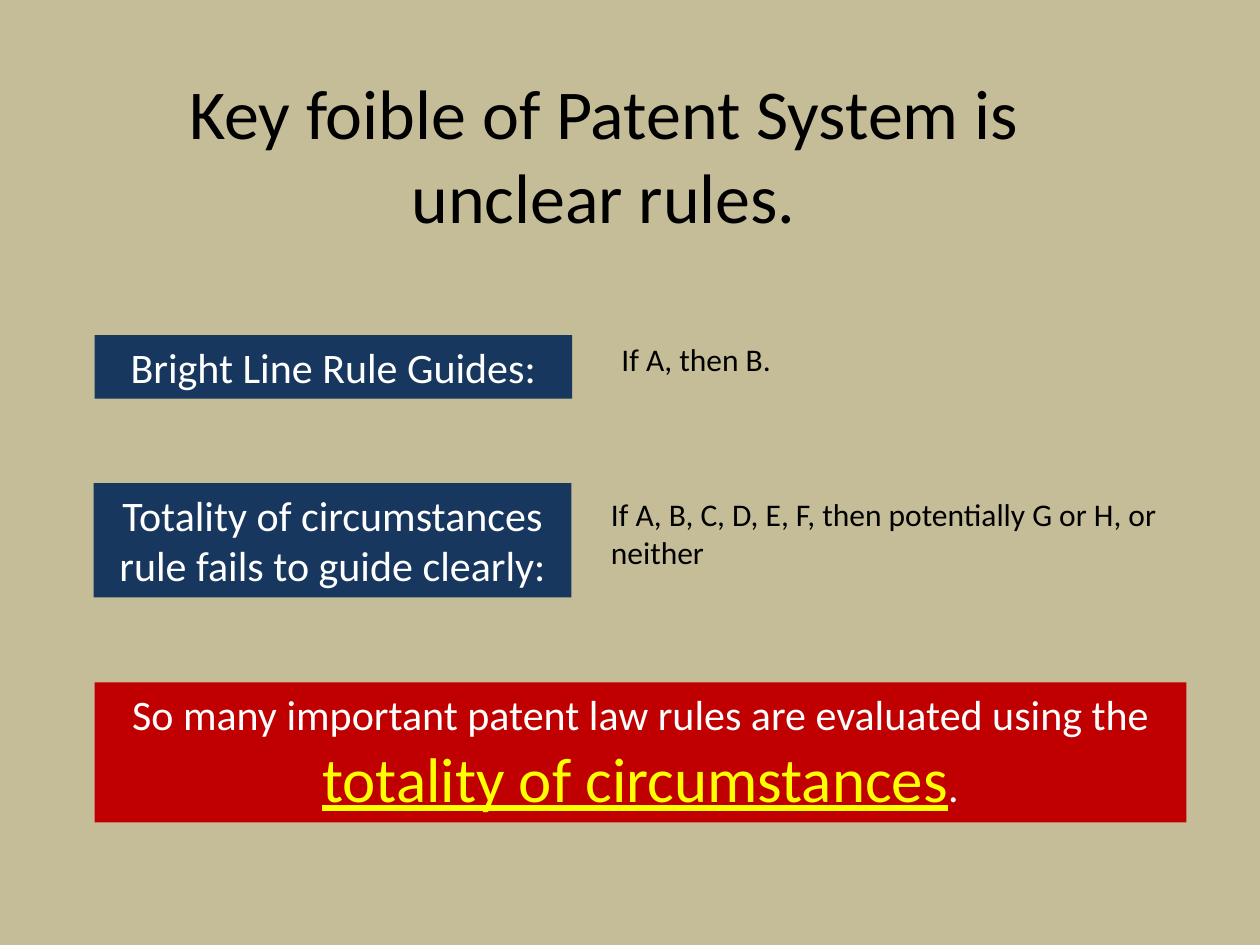
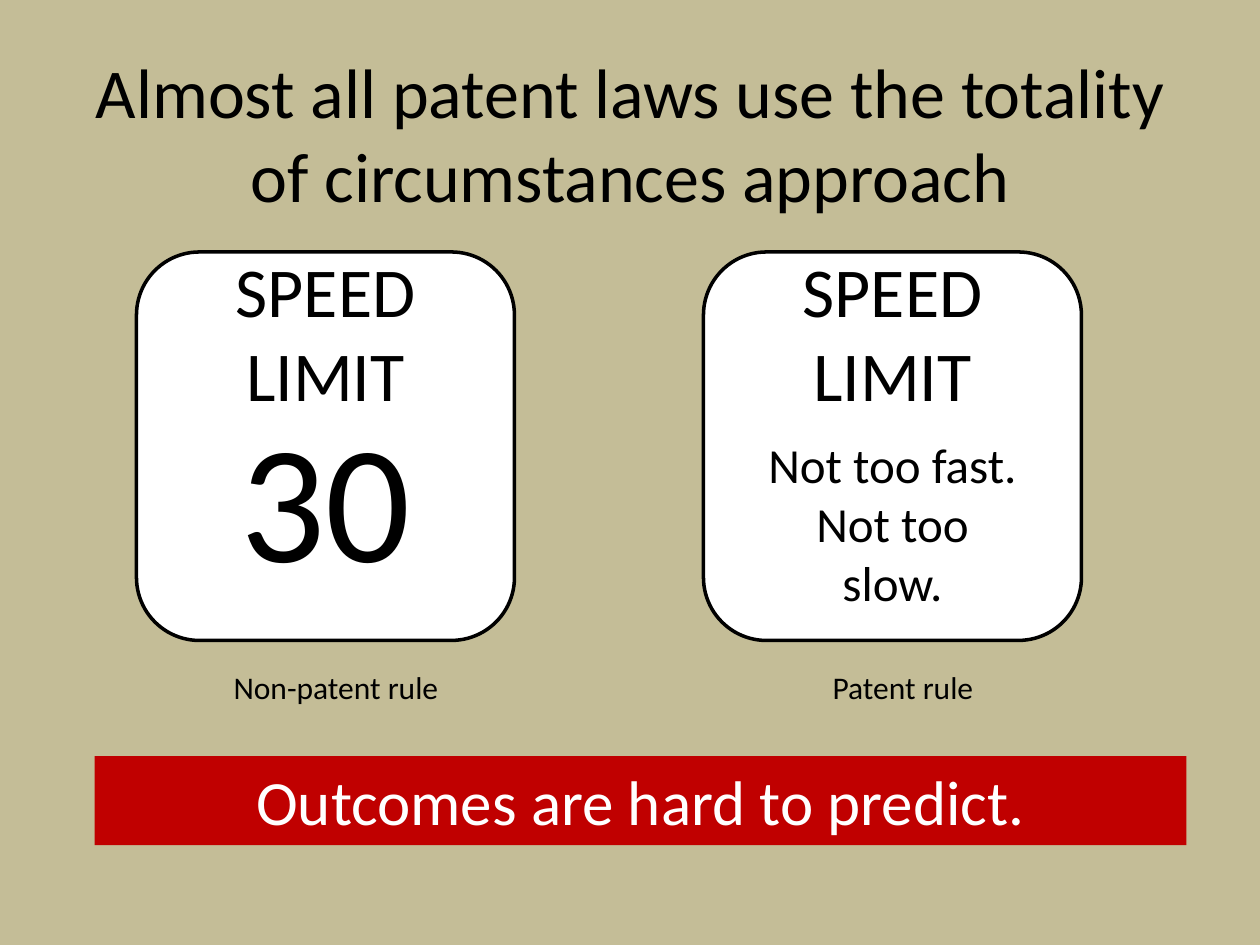
from pptx import Presentation
from pptx.dml.color import RGBColor
from pptx.enum.shapes import MSO_SHAPE as SHAPE
from pptx.enum.text import MSO_ANCHOR as ANCHOR, MSO_AUTO_SIZE as AUTO, PP_ALIGN as ALIGN
from pptx.util import Pt

# Shared style
SAND = RGBColor(0xC4, 0xBD, 0x97)
NAVY = RGBColor(0x17, 0x37, 0x5E)
RED = RGBColor(0xC0, 0x00, 0x00)
YELLOW = RGBColor(0xFF, 0xFF, 0x00)
WHITE = RGBColor(0xFF, 0xFF, 0xFF)
BLACK = RGBColor(0x00, 0x00, 0x00)
FONT = "Calibri"
BAND_LEFT, BAND_WIDTH = 54, 624
SIGN_PITCH = 324


def add_run(p, text, size=18, color=BLACK, underline=None):
    """Add formatted text to a paragraph; a newline becomes a line break."""
    for i, line in enumerate(text.split("\n")):
        if i:
            p.add_line_break()
        r = p.add_run()
        r.text = line
        r.font.name = FONT
        r.font.size = Pt(size)
        r.font.color.rgb = color
        r.font.underline = underline


class Deck:
    def __init__(self):
        self.prs = Presentation()
        self.prs.slide_width, self.prs.slide_height = Pt(720), Pt(540)
        self.s = None

    def new_slide(self):
        self.s = self.prs.slides.add_slide(self.prs.slide_layouts[6])
        fill = self.s.background.fill
        fill.solid()
        fill.fore_color.rgb = SAND

    def shape(self, kind, x, y, w, h, fill, line=None):
        sp = self.s.shapes.add_shape(kind, Pt(x), Pt(y), Pt(w), Pt(h))
        sp.shadow.inherit = False
        sp.fill.solid()
        sp.fill.fore_color.rgb = fill
        if line is None:
            sp.line.fill.background()
        else:
            sp.line.color.rgb = line
            sp.line.width = Pt(2)
        return sp

    def fill_text(self, sp, paragraphs, align=ALIGN.CENTER, **fmt):
        """Fill a shape; each paragraph is a list of (text, format) runs."""
        tf = sp.text_frame
        tf.word_wrap = True
        tf.auto_size = AUTO.SHAPE_TO_FIT_TEXT
        tf.vertical_anchor = ANCHOR.TOP
        for i, runs in enumerate(paragraphs):
            p = tf.add_paragraph() if i else tf.paragraphs[0]
            p.alignment = align
            for text, own in runs:
                add_run(p, text, **{**fmt, **own})

    def text(self, x, y, w, h, *lines, **fmt):
        sp = self.s.shapes.add_textbox(Pt(x), Pt(y), Pt(w), Pt(h))
        self.fill_text(sp, [[(line, {})] for line in lines], **fmt)

    def title(self, x, y, w, text):
        self.text(x, y, w, 104.4, text, size=40)

    def label(self, x, y, h, text):
        sp = self.shape(SHAPE.RECTANGLE, x, y, 273, h, NAVY)
        self.fill_text(sp, [[(text, {})]], size=24, color=WHITE)

    def band(self, y, h, runs):
        sp = self.shape(SHAPE.RECTANGLE, BAND_LEFT, y, BAND_WIDTH, h, RED)
        self.fill_text(sp, [runs], color=WHITE)

    def sign(self, column, limit, y, h, size, caption):
        x = 78 + column * SIGN_PITCH
        text_x = x + 27
        self.shape(SHAPE.ROUNDED_RECTANGLE, x, 144, 216, 222, WHITE, BLACK)
        self.text(text_x, 138, 162, 104.4, "SPEED\nLIMIT", size=40)
        self.text(text_x, y, 162, h, *limit, size=size)
        self.text(text_x, 378, 174, 29, caption)


def rules_slide(deck):
    deck.new_slide()
    deck.title(42, 36, 606, "Key foible of Patent System is unclear rules.")

    # Two kinds of rule with their examples
    deck.text(348, 191, 336, 29, "If A, then B.", align=ALIGN.LEFT)
    deck.label(54, 191.5, 36.4, "Bright Line Rule Guides:")
    deck.label(53.5, 276, 65.4, "Totality of circumstances rule fails to guide clearly:")
    deck.text(342, 279.5, 336, 51,
              "If A, B, C, D, E, F, then potentially G or H, or neither", align=ALIGN.LEFT)

    # Conclusion
    deck.band(390, 80, [
        ("So many important patent law rules are evaluated using the ", dict(size=24)),
        ("totality of circumstances", dict(size=36, color=YELLOW, underline=True)),
        (".", dict(size=24)),
    ])


def speed_slide(deck):
    deck.new_slide()
    deck.title(42, 24, 636, "Almost all patent laws use the totality of circumstances approach")
    deck.band(432, 51, [("Outcomes are hard to predict.", dict(size=36))])

    # Clear sign beside vague sign
    deck.sign(0, ["30"], 222, 123.6, 96, "Non-patent rule")
    deck.sign(1, ["Not too fast.", "Not too slow."], 245, 109, 28, "Patent rule")


def main():
    deck = Deck()
    rules_slide(deck)
    speed_slide(deck)
    deck.prs.save("out.pptx")


if __name__ == "__main__":
    main()
